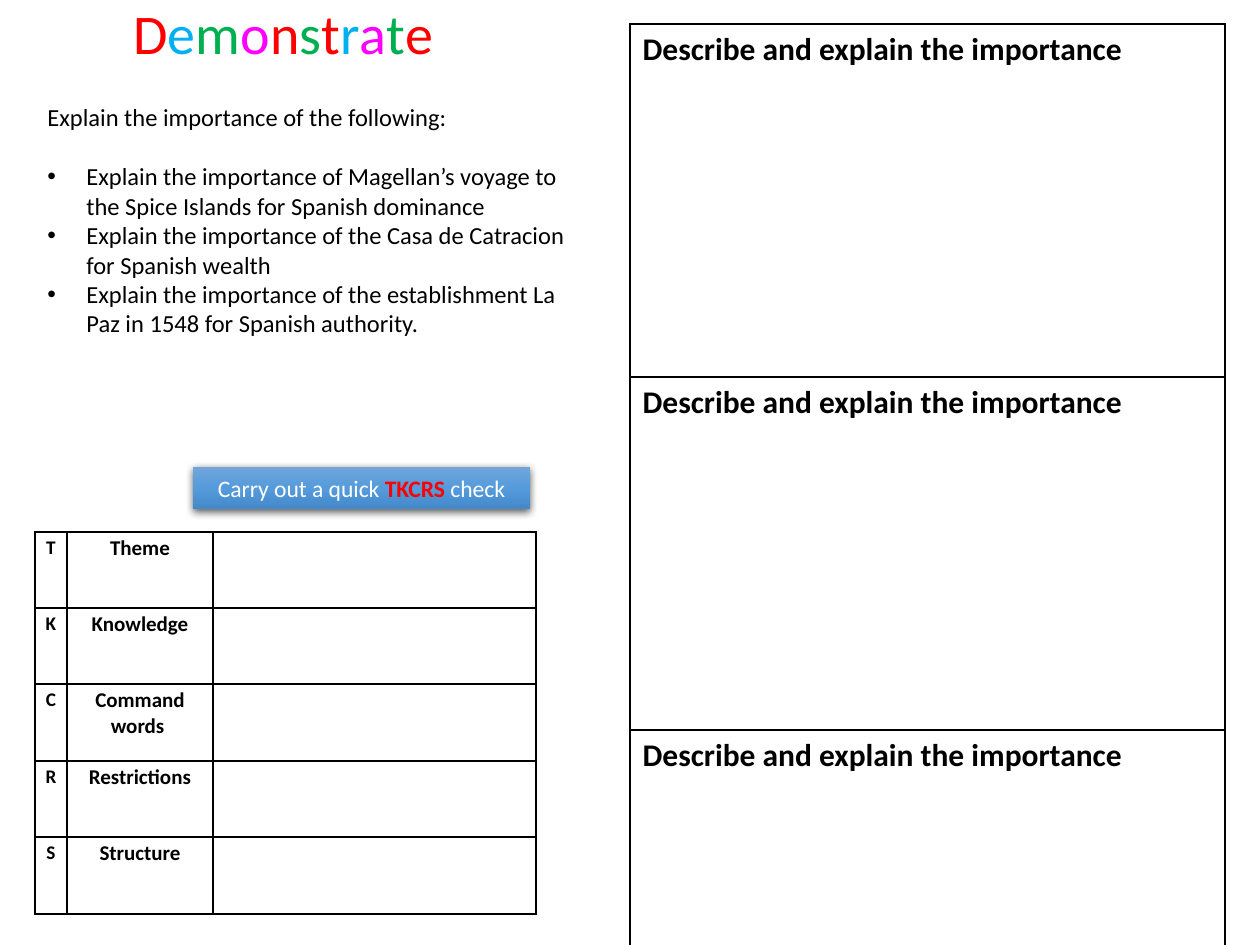
from copy import deepcopy
from dataclasses import dataclass
from typing import Optional

from lxml.etree import SubElement
from pptx import Presentation
from pptx.dml.color import RGBColor
from pptx.enum.shapes import MSO_SHAPE
from pptx.enum.text import MSO_ANCHOR, PP_ALIGN
from pptx.oxml.ns import qn
from pptx.util import Pt

EMU_PER_PX = 914400 / 126
FONT = "Calibri"
BLACK = RGBColor(0, 0, 0)
WHITE = RGBColor(255, 255, 255)
RED = RGBColor(255, 0, 0)
BLUE = RGBColor(0, 176, 240)
GREEN = RGBColor(0, 176, 80)
PINK = RGBColor(255, 0, 255)
BANNER_STOPS = [
    (0, RGBColor(0x71, 0xA6, 0xDB)),
    (0.5, RGBColor(0x55, 0x9B, 0xDB)),
    (1, RGBColor(0x44, 0x8A, 0xCA)),
]


@dataclass(frozen=True)
class Box:
    left: int
    top: int
    width: int
    height: int

    def emu(self) -> tuple:
        return tuple(px(n) for n in (self.left, self.top, self.width, self.height))


@dataclass(frozen=True)
class Span:
    text: str
    color: RGBColor = BLACK
    bold: bool = False


@dataclass(frozen=True)
class Grid:
    left: int
    top: int
    columns: list[int]
    rows: list[int]
    cells: list[list[str]]
    sizes: list[float]
    align: PP_ALIGN
    margins: Optional[tuple[int, int]] = None


TITLE = [
    Span(letter, color)
    for letter, color in zip(
        "Demonstrate",
        [RED, BLUE, GREEN, PINK, RED, GREEN, RED, BLUE, PINK, GREEN, RED],
    )
]
INTRO = "Explain the importance of the following:"
TASKS = [
    "Explain the importance of Magellan’s voyage to the Spice Islands for Spanish dominance",
    "Explain the importance of the Casa de Catracion for Spanish wealth",
    "Explain the importance of the establishment La Paz in 1548 for Spanish authority.",
]
BANNER = [
    Span("Carry out a quick ", WHITE),
    Span("TKCRS", RED, True),
    Span(" check", WHITE),
]
CHECKS = ["Theme", "Knowledge", "Command\nwords ", "Restrictions", "Structure"]
CHECK_HEIGHT = 382
CHECK_EDGES = [CHECK_HEIGHT * n // len(CHECKS) for n in range(len(CHECKS) + 1)]

GRIDS = [
    Grid(
        35, 532, [32, 146, 323],
        [low - high for high, low in zip(CHECK_EDGES, CHECK_EDGES[1:])],
        [[check[0], check, ""] for check in CHECKS],
        [11, 12, 12], PP_ALIGN.CENTER, (8, 4),
    ),
    Grid(
        630, 24, [595], [353, 353, 218],
        [["Describe and explain the importance"]] * 3,
        [18], PP_ALIGN.LEFT,
    ),
]


def px(length: int) -> int:
    return round(length * EMU_PER_PX)


def style(font, size: float, color: RGBColor = BLACK, bold: bool = False) -> None:
    font.name, font.size, font.bold = FONT, Pt(size), bold
    font.color.rgb = color


def add_spans(para, spans: list[Span], size: float) -> None:
    for span in spans:
        run = para.add_run()
        run.text = span.text
        style(run.font, size, span.color, span.bold)


def add_text_box(slide, box: Box):
    frame = slide.shapes.add_textbox(*box.emu()).text_frame
    frame.word_wrap = True
    return frame


def add_bullet(para) -> None:
    properties = para._p.get_or_add_pPr()
    properties.set("marL", str(px(39)))
    properties.set("indent", str(px(-39)))
    SubElement(properties, qn("a:buFont"), typeface="Arial")
    SubElement(properties, qn("a:buChar"), char="•")


def add_tasks(slide, box: Box) -> None:
    frame = add_text_box(slide, box)
    frame.text = "\n".join([INTRO, *TASKS])
    for para in frame.paragraphs:
        style(para.runs[0].font, 14)
    bullets = frame.paragraphs[1:]
    bullets[0].space_before = Pt(17)
    for para in bullets:
        add_bullet(para)


def add_banner(slide, box: Box) -> None:
    banner = slide.shapes.add_shape(MSO_SHAPE.RECTANGLE, *box.emu())
    banner.line.fill.background()
    banner.fill.gradient()
    banner.fill.gradient_angle = 270
    properties = banner._element.spPr
    stop_list = properties.find(".//" + qn("a:gsLst"))
    stop_list.insert(1, deepcopy(stop_list[0]))
    for stop, (position, color) in zip(banner.fill.gradient_stops, BANNER_STOPS):
        stop.position = position
        stop.color.rgb = color
    banner.shadow.inherit = False
    shadow = SubElement(
        properties.find(qn("a:effectLst")), qn("a:outerShdw"),
        blurRad=str(Pt(4.5)), dist=str(Pt(1.5)), dir="5400000", rotWithShape="0",
    )
    shade = SubElement(shadow, qn("a:srgbClr"), val=str(BLACK))
    SubElement(shade, qn("a:alpha"), val="63000")
    frame = banner.text_frame
    frame.word_wrap = True
    frame.vertical_anchor = MSO_ANCHOR.MIDDLE
    frame.paragraphs[0].alignment = PP_ALIGN.CENTER
    add_spans(frame.paragraphs[0], BANNER, 13.5)


def add_borders(cell) -> None:
    properties = cell._tc.get_or_add_tcPr()
    for side in ("lnL", "lnR", "lnT", "lnB"):
        line = SubElement(properties, qn(f"a:{side}"), w=str(Pt(1)))
        fill = SubElement(line, qn("a:solidFill"))
        SubElement(fill, qn("a:srgbClr"), val=str(BLACK))


def add_grid(slide, grid: Grid) -> None:
    box = Box(grid.left, grid.top, sum(grid.columns), sum(grid.rows))
    table = slide.shapes.add_table(
        len(grid.rows), len(grid.columns), *box.emu()
    ).table
    table.first_row = table.horz_banding = False
    for column, width in zip(table.columns, grid.columns):
        column.width = px(width)
    for row, height, texts in zip(table.rows, grid.rows, grid.cells):
        row.height = px(height)
        for cell, text, size in zip(row.cells, texts, grid.sizes):
            add_borders(cell)
            cell.fill.background()
            if grid.margins:
                side, end = grid.margins
                cell.margin_left = cell.margin_right = px(side)
                cell.margin_top = cell.margin_bottom = px(end)
            cell.text_frame.text = text
            for para in cell.text_frame.paragraphs:
                para.alignment = grid.align
                for run in para.runs:
                    style(run.font, size, bold=True)


def main() -> None:
    deck = Presentation()
    deck.slide_width, deck.slide_height = px(1260), px(945)
    slide = deck.slides.add_slide(deck.slide_layouts[6])
    add_banner(slide, Box(193, 467, 337, 42))
    title = add_text_box(slide, Box(121, -8, 674, 81))
    add_spans(title.paragraphs[0], TITLE, 32)
    for grid in GRIDS:
        add_grid(slide, grid)
    add_tasks(slide, Box(35, 96, 556, 251))
    deck.save("out.pptx")


if __name__ == "__main__":
    main()
